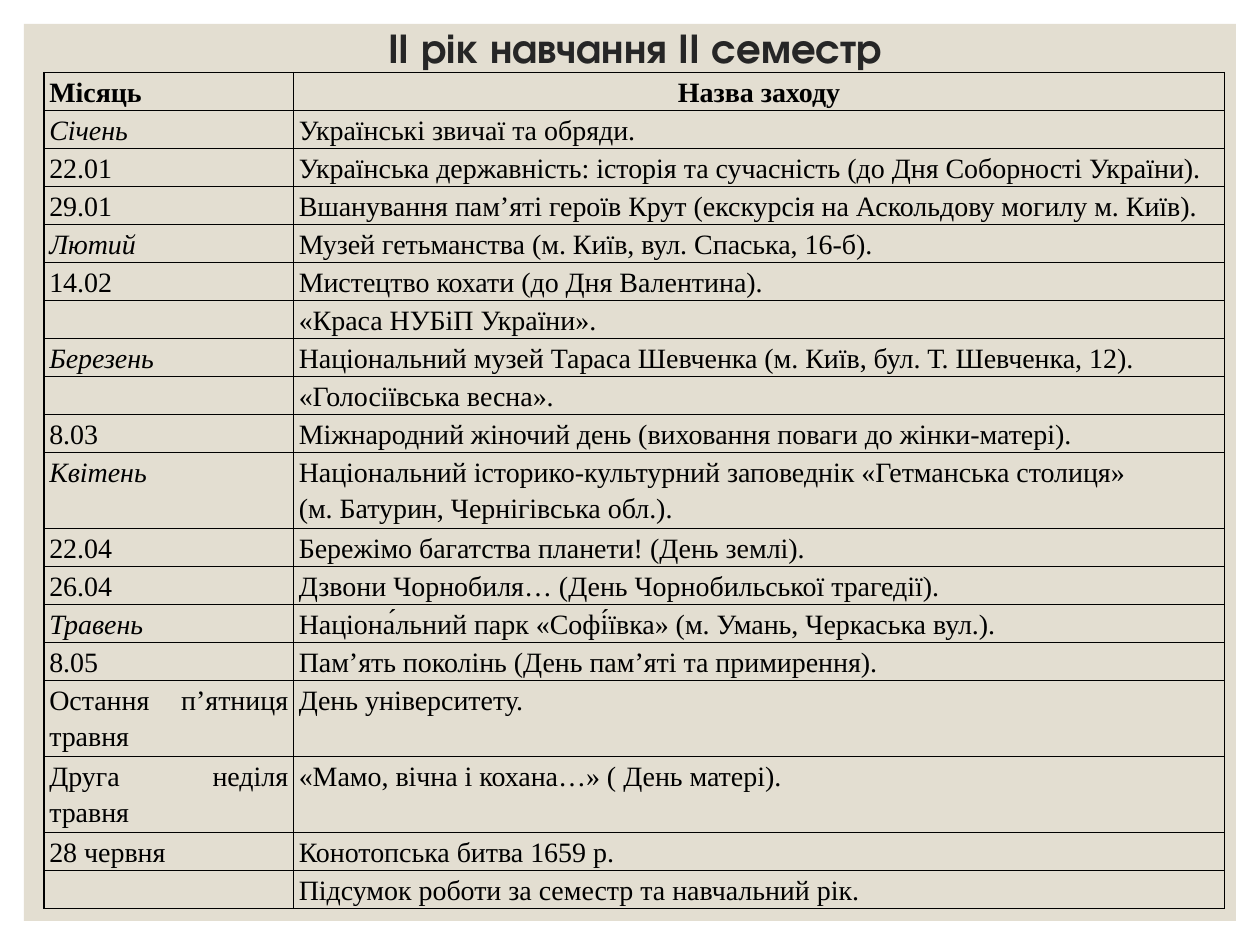
from dataclasses import dataclass

from lxml.etree import SubElement
from pptx import Presentation
from pptx.dml.color import RGBColor
from pptx.enum.shapes import MSO_SHAPE
from pptx.enum.text import MSO_ANCHOR, MSO_AUTO_SIZE, PP_ALIGN
from pptx.oxml.ns import qn
from pptx.table import _Cell
from pptx.util import Pt

PANEL = RGBColor(0xE3, 0xDE, 0xD1)
TITLE = RGBColor(0x26, 0x26, 0x26)
BLACK = RGBColor(0, 0, 0)
ROW_HEIGHT = 21.73
COLUMN_WIDTHS = (142.56, 532.08)
CELL_FONT = {"name": "Times New Roman", "size": Pt(16)}
CELL_MARGINS = {"margin_left": Pt(3), "margin_right": Pt(3),
                "margin_top": 0, "margin_bottom": 0}


@dataclass
class Event:
    when: str
    name: str
    month: bool = False  # month names are set in italics
    lines: int = 1


EVENTS = [
    Event("Січень", "Українські звичаї та обряди.", month=True),
    Event("22.01", "Українська державність: історія та сучасність (до Дня Соборності України)."),
    Event("29.01", "Вшанування пам’яті героїв Крут (екскурсія на Аскольдову могилу м. Київ)."),
    Event("Лютий", "Музей гетьманства (м. Київ, вул. Спаська, 16-б).", month=True),
    Event("14.02", "Мистецтво кохати (до Дня Валентина)."),
    Event("", "«Краса НУБіП України»."),
    Event("Березень", "Національний музей Тараса Шевченка (м. Київ, бул. Т. Шевченка, 12).", month=True),
    Event("", "«Голосіївська весна»."),
    Event("8.03", "Міжнародний жіночий день (виховання поваги до жінки-матері)."),
    Event("Квітень", "Національний історико-культурний заповеднік «Гетманська столиця» \n"
          "(м. Батурин, Чернігівська обл.).", month=True, lines=2),
    Event("22.04", "Бережімо багатства планети! (День землі)."),
    Event("26.04", "Дзвони Чорнобиля… (День Чорнобильської трагедії)."),
    Event("Травень", "Націона́льний парк «Софі́ївка» (м. Умань, Черкаська вул.).", month=True),
    Event("8.05", "Пам’ять поколінь (День пам’яті та примирення). "),
    Event("Остання п’ятниця травня", "День університету.", lines=2),
    Event("Друга неділя травня", "«Мамо, вічна і кохана…» ( День матері).", lines=2),
    Event("28 червня", "Конотопська битва 1659 р."),
    Event("", "Підсумок роботи за семестр та навчальний рік."),
]


def apply(target: object, values: dict) -> None:
    for name, value in values.items():
        setattr(target, name, value)


def draw_borders(cell: _Cell) -> None:
    properties = cell._tc.get_or_add_tcPr()
    for side in ("a:lnL", "a:lnR", "a:lnT", "a:lnB"):
        line = SubElement(properties, qn(side), w=str(Pt(1)))
        fill = SubElement(line, qn("a:solidFill"))
        SubElement(fill, qn("a:srgbClr"), val=str(BLACK))


def fill_cell(cell: _Cell, text: str, align: PP_ALIGN = PP_ALIGN.JUSTIFY,
              bold: bool = False, italic: bool = False) -> None:
    apply(cell, CELL_MARGINS)
    draw_borders(cell)
    cell.fill.background()
    cell.text = text
    for para in cell.text_frame.paragraphs:
        apply(para, {"alignment": align, "line_spacing": 1.15})
        for span in para.runs:
            apply(span.font, {**CELL_FONT, "bold": bold, "italic": italic})
            span.font.color.rgb = BLACK
        if not para.runs:  # keeps an empty cell as low as its row
            SubElement(para._p, qn("a:endParaRPr"), sz="1600")


deck = Presentation()
apply(deck, {"slide_width": Pt(720), "slide_height": Pt(540)})
page = deck.slides.add_slide(deck.slide_layouts[5])

# Title
title = page.shapes.title
apply(title, {"left": Pt(60.5), "top": Pt(15.1), "width": Pt(604.8), "height": Pt(26.6)})
frame = title.text_frame
frame.text = "ІІ рік навчання ІІ семестр"
apply(frame, {"vertical_anchor": MSO_ANCHOR.MIDDLE, "word_wrap": True,
              "auto_size": MSO_AUTO_SIZE.NONE})
para = frame.paragraphs[0]
apply(para, {"alignment": PP_ALIGN.CENTER, "line_spacing": 0.9})
span = para.runs[0]
apply(span.font, {"name": "TeX Gyre Adventor", "size": Pt(24), "bold": True})
span.font.color.rgb = TITLE

# Background panel, behind the title
panel = page.shapes.add_shape(MSO_SHAPE.RECTANGLE, Pt(13.7), Pt(13.7), Pt(692.6), Pt(512.6))
panel.shadow.inherit = False
panel.fill.solid()
panel.fill.fore_color.rgb = PANEL
panel.line.fill.background()
title.element.addprevious(panel.element)

# Table of events
total_lines = 1 + sum(event.lines for event in EVENTS)
box = page.shapes.add_table(len(EVENTS) + 1, 2, Pt(25.2), Pt(41.5),
                            Pt(sum(COLUMN_WIDTHS)), Pt(ROW_HEIGHT * total_lines))
table = box.table
apply(table, {"first_row": False, "horz_banding": False})
for column, width in zip(table.columns, COLUMN_WIDTHS):
    column.width = Pt(width)

table.rows[0].height = Pt(ROW_HEIGHT)
fill_cell(table.cell(0, 0), "Місяць", bold=True)
fill_cell(table.cell(0, 1), "Назва заходу", PP_ALIGN.CENTER, bold=True)
for row, event in enumerate(EVENTS, start=1):
    table.rows[row].height = Pt(ROW_HEIGHT * event.lines)
    fill_cell(table.cell(row, 0), event.when, italic=event.month)
    fill_cell(table.cell(row, 1), event.name)

deck.save("out.pptx")
